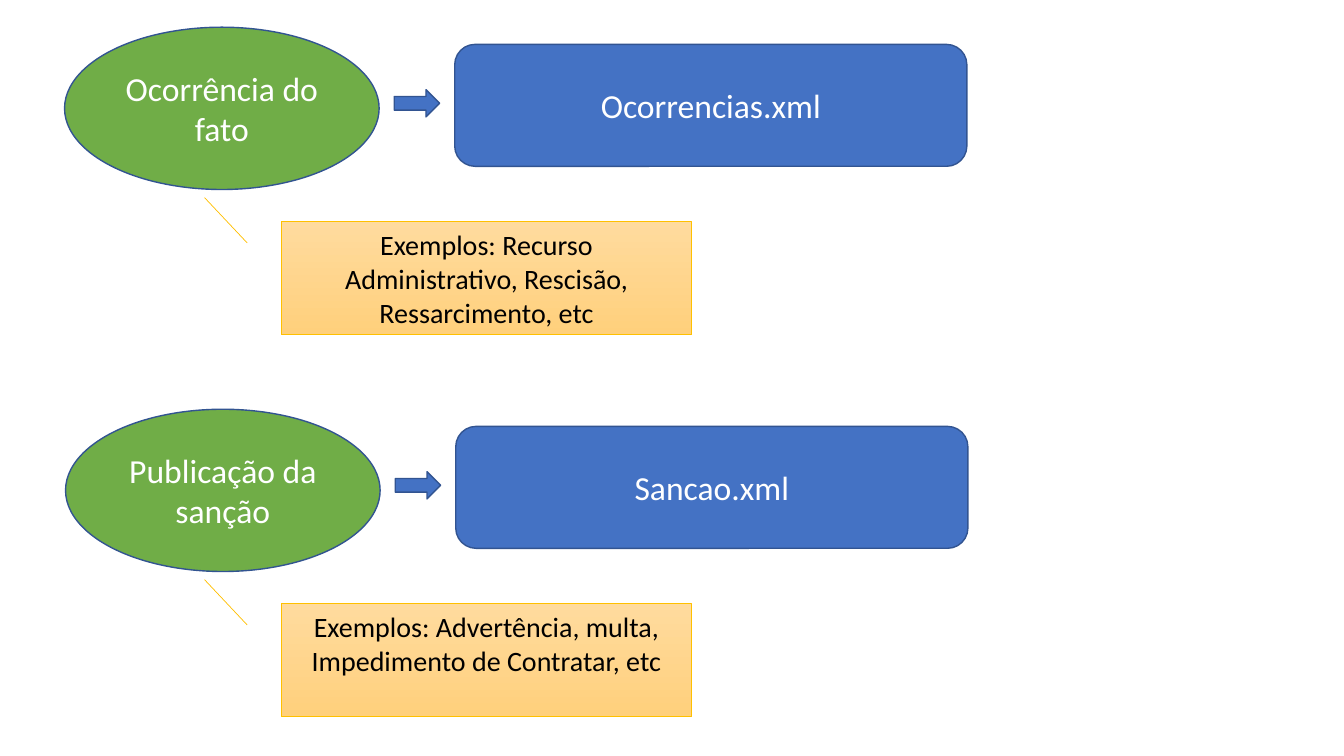
"""Build the slide that maps each event to its XML file, with examples."""
from dataclasses import dataclass

from pptx import Presentation
from pptx.dml.color import RGBColor as RGB
from pptx.enum.shapes import MSO_SHAPE as SHAPE
from pptx.enum.text import MSO_ANCHOR as ANCHOR, PP_ALIGN as ALIGN
from pptx.util import Inches, Pt


@dataclass(frozen=True)
class Theme:
    font: str = "Calibri"
    event: str = "70AD47"
    file: str = "4472C4"
    outline: str = "325491"
    note_stops: tuple = ("FFDB9E", "FFD07C")
    note_line: str = "FFC000"
    light: str = "FFFFFF"
    dark: str = "000000"
    label_size: int = 24
    note_size: int = 20


class Diagram:
    def __init__(self, slide, theme):
        self.slide = slide
        self.theme = theme

    def shape(self, kind, box, line, width):
        sp = self.slide.shapes.add_shape(kind, *map(Inches, box))
        sp.shadow.inherit = False
        sp.line.color.rgb = RGB.from_string(line)
        sp.line.width = Pt(width)
        return sp

    def label(self, sp, text, size, color, anchor):
        tf = sp.text_frame
        tf.word_wrap = True
        tf.vertical_anchor = anchor
        p = tf.paragraphs[0]
        p.text = text
        p.alignment = ALIGN.CENTER
        for r in p.runs:
            r.font.name = self.theme.font
            r.font.size = Pt(size)
            r.font.color.rgb = RGB.from_string(color)

    def solid(self, kind, box, fill, text=""):
        t = self.theme
        sp = self.shape(kind, box, t.outline, 1)
        sp.fill.solid()
        sp.fill.fore_color.rgb = RGB.from_string(fill)
        if text:
            self.label(sp, text, t.label_size, t.light, ANCHOR.MIDDLE)

    def event(self, x, y, text):
        self.solid(SHAPE.OVAL, (x, y, 3.12, 1.61), self.theme.event, text)

    def arrow(self, x, y):
        self.solid(SHAPE.RIGHT_ARROW, (x, y, 0.45, 0.27), self.theme.file)

    def xml_file(self, x, y, text):
        box = (x, y, 5.08, 1.21)
        self.solid(SHAPE.ROUNDED_RECTANGLE, box, self.theme.file, text)

    def note(self, x, y, text):
        t = self.theme
        sp = self.shape(SHAPE.LINE_CALLOUT_1, (x, y, 4.07, 1.12), t.note_line, 0.5)
        for i, value in enumerate((0.188, -0.083, -0.214, -0.187)):
            sp.adjustments[i] = value
        sp.fill.gradient()
        sp.fill.gradient_angle = 270
        for stop, color in zip(sp.fill.gradient_stops, t.note_stops):
            stop.color.rgb = RGB.from_string(color)
        sp.text_frame.margin_top = Inches(0.06)
        self.label(sp, text, t.note_size, t.dark, ANCHOR.TOP)


ROWS = (
    ("Ocorrência do fato", "Ocorrencias.xml",
     "Exemplos: Recurso Administrativo, Rescisão, Ressarcimento, etc"),
    ("Publicação da sanção", "Sancao.xml",
     "Exemplos: Advertência, multa, Impedimento de Contratar, etc"),
)
ROW_STEP = 3.79
ROW_SHIFT = 0.01


def main():
    prs = Presentation()
    prs.slide_width, prs.slide_height = Inches(13.33), Inches(7.5)
    s = prs.slides.add_slide(prs.slide_layouts[6])
    diagram = Diagram(s, Theme())
    for i, (event, xml_file, note) in enumerate(ROWS):
        dx, dy = i * ROW_SHIFT, i * ROW_STEP
        diagram.event(0.64 + dx, 0.27 + dy, event)
        diagram.xml_file(4.51 + dx, 0.44 + dy, xml_file)
        diagram.arrow(3.91 + dx, 0.89 + dy)
        diagram.note(2.79, 2.2 + dy, note)
    prs.save("out.pptx")


if __name__ == "__main__":
    main()
